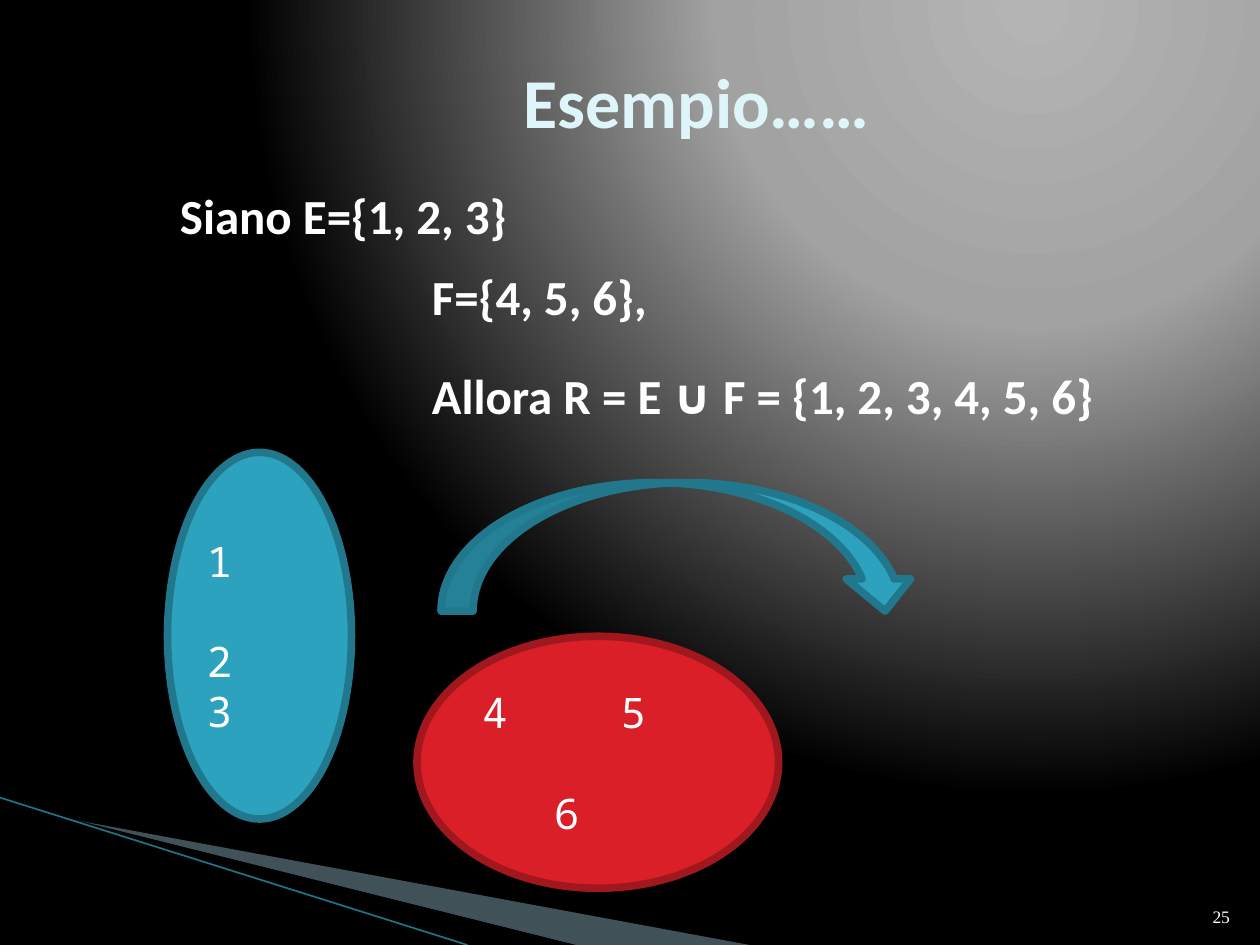
import pptx
import pptx.util
import pptx.dml.color
import pptx.enum.shapes
import pptx.enum.text
import pptx.oxml
import pptx.oxml.ns
from lxml import etree

Inches, Pt = pptx.util.Inches, pptx.util.Pt
SHAPE = pptx.enum.shapes.MSO_SHAPE
ALIGN = pptx.enum.text.PP_ALIGN
ANCHOR = pptx.enum.text.MSO_ANCHOR
qn = pptx.oxml.ns.qn

COLORS = {
    "white": "FFFFFF", "black": "000000", "title": "DEF5FA",
    "teal": "2DA2BF", "teal_edge": "21788D",
    "red": "DA1F28", "red_edge": "A1171E",
    "wedge": "A0CBDC", "rule": "1F7488",
}
GLOW = [(0, "B4B4B4"), (40, "A2A2A2"), (100, "000000")]
GLOW_FOCUS = {"l": 65, "t": 0, "r": 0, "b": 98}

# Points of the corner decoration: colour, opacity in percent, outline
WEDGES = [
    ("wedge", 40, [(0.55, 6.5), (5.95, 7.5), (4.56, 7.5)]),
    ("black", 100, [(0.53, 6.49), (4.57, 7.5), (3.72, 7.5)]),
]
RULE = (0, 6.33, 3.71, 7.5)

# A paragraph is (text, left margin in inches, space before in points)
BODY = {"size": 28, "font": "Calibri", "color": "white", "bold": True}
TEXTS = [
    ((9.46, 7.01, 0.4, 0.4), [("25", 0, 0)],
     {"size": 10, "font": "Times New Roman", "color": "white",
      "align": ALIGN.RIGHT, "anchor": ANCHOR.BOTTOM}),
    ((1.28, 0.17, 8.5, 1.25), [("Esempio……", 0, 0)],
     {"size": 40, "font": "Calibri", "color": "title", "bold": True,
      "align": ALIGN.CENTER, "anchor": ANCHOR.MIDDLE}),
    ((1.33, 1.42, 6.83, 1.27),
     [("Siano E={1, 2, 3}", 0, 0), ("F={4, 5, 6},", 2, 13)], BODY),
    ((3.33, 2.85, 6.25, 0.57),
     [("Allora R = E ∪ F = {1, 2, 3, 4, 5, 6}", 0, 0)], BODY),
]

SET_STYLE = {"size": 24, "font": "Noto Sans Mono", "color": "white",
             "anchor": ANCHOR.MIDDLE}
FIGURES = [
    (SHAPE.OVAL, (1.33, 3.59, 1.46, 2.91), "teal",
     [("1", 0, 0), ("2", 0, 28.5), ("3", 0, 0)]),
    (SHAPE.OVAL, (3.31, 5.05, 2.87, 2), "red",
     [("4\t5", 0, 0), ("6", 0.57, 28.5)]),
    (SHAPE.CURVED_DOWN_ARROW, (3.5, 3.83, 3.78, 1.02), "teal", []),
]
SET_TAB = 1.1


def rgb(name):
    return pptx.dml.color.RGBColor.from_string(COLORS[name])


def set_glow(slide):
    """Give the slide a circular gradient background."""
    stops = "".join(f'<a:gs pos="{pos * 1000}"><a:srgbClr val="{c}"/></a:gs>'
                    for pos, c in GLOW)
    focus = " ".join(f'{side}="{v * 1000}"' for side, v in GLOW_FOCUS.items())
    bg = pptx.oxml.parse_xml(
        f'<p:bg {pptx.oxml.ns.nsdecls("p", "a")}><p:bgPr>'
        f'<a:gradFill rotWithShape="1"><a:gsLst>{stops}</a:gsLst>'
        f'<a:path path="circle"><a:fillToRect {focus}/></a:path></a:gradFill>'
        '<a:effectLst/></p:bgPr></p:bg>')
    slide.element.cSld.insert(0, bg)


def write(s, paragraphs, size, font, color, bold=False,
          align=ALIGN.LEFT, anchor=ANCHOR.TOP):
    tf = s.text_frame
    tf.word_wrap = True
    tf.vertical_anchor = anchor
    for i, (text, margin, before) in enumerate(paragraphs):
        p = tf.add_paragraph() if i else tf.paragraphs[0]
        p.text = text
        p.alignment = align
        p.space_before = Pt(before)
        pPr = p._p.get_or_add_pPr()
        pPr.set("marL", str(Inches(margin)))
        if "\t" in text:
            tabs = etree.SubElement(pPr, qn("a:tabLst"))
            etree.SubElement(tabs, qn("a:tab"), pos=str(Inches(SET_TAB)), algn="l")
        for r in p.runs:
            r.font.size = Pt(size)
            r.font.name = font
            r.font.bold = bold
            r.font.color.rgb = rgb(color)


def add_wedge(slide, color, opacity, points):
    start, *rest = [(Inches(x), Inches(y)) for x, y in points]
    builder = slide.shapes.build_freeform(*start)
    builder.add_line_segments(rest, close=True)
    s = builder.convert_to_shape()
    s.shadow.inherit = False
    s.fill.solid()
    s.fill.fore_color.rgb = rgb(color)
    s.line.fill.background()
    if opacity < 100:
        clr = s.fill._xPr.find(".//" + qn("a:srgbClr"))
        etree.SubElement(clr, qn("a:alpha"), val=str(opacity * 1000))


def add_rule(slide):
    line = slide.shapes.add_connector(
        pptx.enum.shapes.MSO_CONNECTOR.STRAIGHT, *map(Inches, RULE))
    line.line.color.rgb = rgb("rule")
    line.line.width = Pt(0.95)
    etree.SubElement(line._element.spPr, qn("a:effectLst"))


def add_figure(slide, kind, box, color, paragraphs):
    s = slide.shapes.add_shape(kind, *map(Inches, box))
    s.shadow.inherit = False
    s.fill.solid()
    s.fill.fore_color.rgb = rgb(color)
    s.line.color.rgb = rgb(color + "_edge")
    s.line.width = Pt(4.33)
    write(s, paragraphs, **SET_STYLE)


def main():
    prs = pptx.Presentation()
    prs.slide_width, prs.slide_height = Inches(10), Inches(7.5)
    slide = prs.slides.add_slide(prs.slide_layouts[6])
    set_glow(slide)
    for wedge in WEDGES:
        add_wedge(slide, *wedge)
    add_rule(slide)
    for box, paragraphs, style in TEXTS:
        write(slide.shapes.add_textbox(*map(Inches, box)), paragraphs, **style)
    for figure in FIGURES:
        add_figure(slide, *figure)
    prs.save("out.pptx")


if __name__ == "__main__":
    main()
